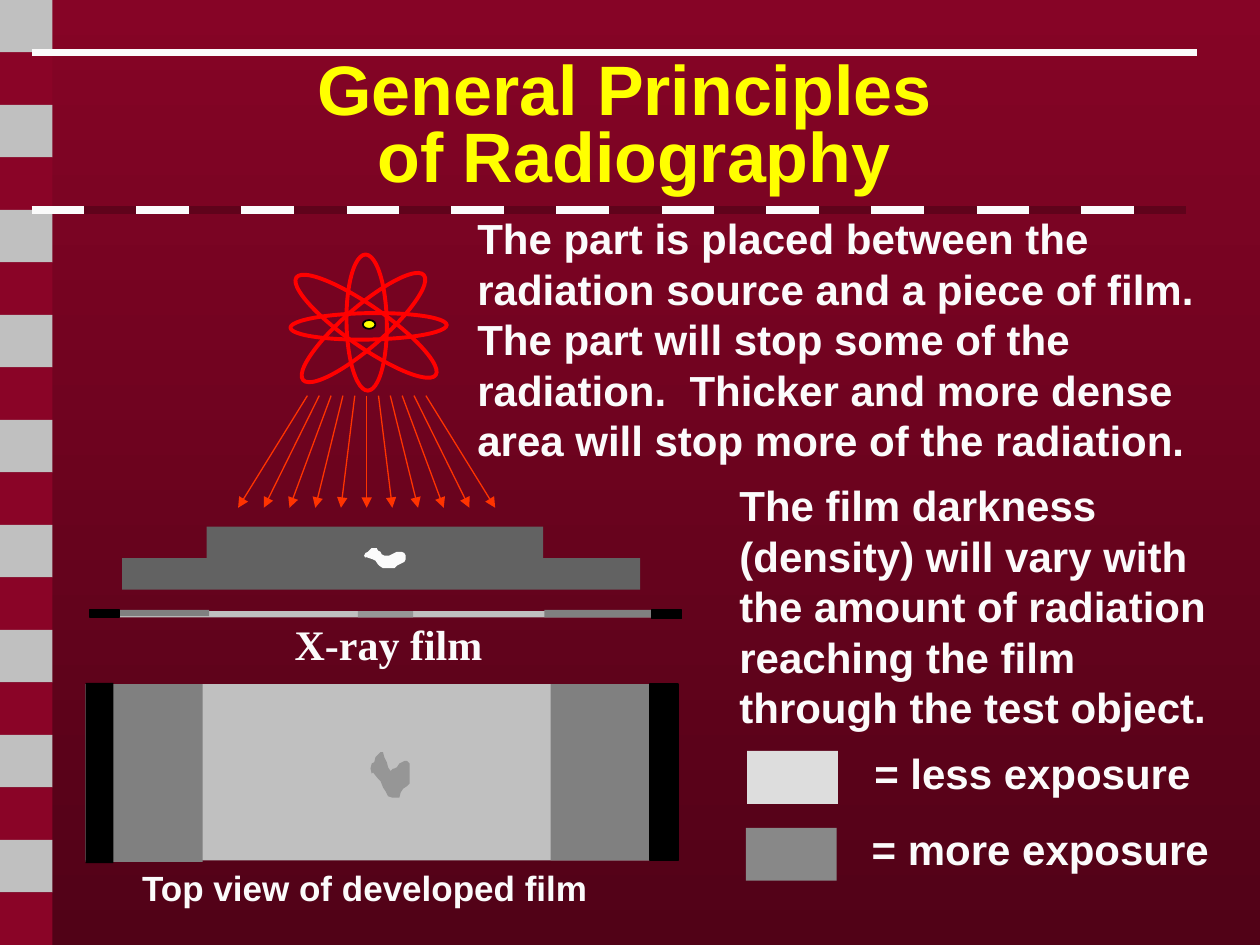
from lxml.etree import SubElement
from pptx import Presentation
from pptx.dml.color import RGBColor
from pptx.enum.shapes import MSO_CONNECTOR as Connector, MSO_SHAPE as Shape
from pptx.enum.text import MSO_ANCHOR as Anchor, MSO_AUTO_SIZE as AutoSize, PP_ALIGN as Align
from pptx.oxml.ns import qn
from pptx.util import Inches, Pt

THEME = {
    "top": "860426", "bottom": "510217", "band": "8A0427", "dash": "5F031B",
    "white": "FBFBFB", "title": "FFFF00", "silver": "C0C0C0", "steel": "626262",
    "gray": "808080", "flaw": "969696", "less": "DDDDDD", "more": "888888",
    "black": "000000", "atom": "FF0000", "ray": "FF3300",
    "sans": "Arial", "serif": "Times New Roman",
    "title_size": 40, "body_size": 24, "caption_size": 20,
}

deck = Presentation()
deck.slide_width, deck.slide_height = Inches(10), Inches(7.5)
UNIT = deck.slide_width // 1000  # places are thousandths of the slide's width
CELL = 1000 / 24                 # the side band and the rules share 24 columns
slide = deck.slides.add_slide(deck.slide_layouts[5])
shapes = slide.shapes


def color(name):
    return RGBColor.from_string(THEME[name])


def write(text, box, holder=None, size="body_size", font="sans", ink="white",
          align=Align.LEFT, anchor=Anchor.TOP, spacing=None, fit=AutoSize.SHAPE_TO_FIT_TEXT):
    place = [int(v * UNIT) for v in box]
    if holder is None:
        holder = shapes.add_textbox(*place)
    holder.left, holder.top, holder.width, holder.height = place
    frame = holder.text_frame
    frame.text = text
    frame.word_wrap, frame.auto_size, frame.vertical_anchor = True, fit, anchor
    paragraph = frame.paragraphs[0]
    paragraph.alignment, paragraph.line_spacing = align, spacing
    for run in paragraph.runs:
        run.font.name, run.font.size, run.font.bold = THEME[font], Pt(THEME[size]), True
        run.font.color.rgb = color(ink)


# Background
backdrop = slide.background.fill
backdrop.gradient()
backdrop.gradient_angle = 270
for stop, name in zip(backdrop.gradient_stops, ("top", "bottom")):
    stop.color.rgb = color(name)

# Blocks: left, top, width, height, rotation, preset, fill, outline, outline width
blocks = [(0, row * CELL, CELL, CELL, 0, Shape.RECTANGLE,
           "band" if row % 2 else "silver", None, 0) for row in range(18)]

# Atom: four orbits and a nucleus
blocks += [(*orbit, Shape.OVAL, None, "atom", 2.25) for orbit in (
    (282, 197, 21, 124, 269), (225, 244, 127, 32, 319),
    (223, 243, 135, 32, 35), (237, 240, 108, 32, 269))]
blocks.append((288, 254, 10, 7, 0, Shape.OVAL, "title", "black", 1))

# Film from the side, film from above, and the key
blocks += [(*box, 0, Shape.RECTANGLE, fill, outline, 1) for *box, fill, outline in (
    (71, 485, 470, 5, "silver", None),
    (72, 484, 94, 5, "gray", None),
    (432, 484, 109, 6, "gray", None),
    (71, 484, 24, 6, "black", "black"),
    (517, 484, 24, 7, "black", "black"),
    (284, 485, 44, 5, "flaw", None),
    (68, 543, 470, 140, "silver", None),
    (437, 543, 101, 140, "gray", None),
    (68, 543, 93, 141, "gray", None),
    (516, 543, 22, 140, "black", "black"),
    (68, 542, 22, 143, "black", None),
    (593, 596, 72, 42, "less", None),
    (592, 657, 72, 42, "more", None))]

for *box, turn, preset, fill, outline, weight in blocks:
    block = shapes.add_shape(preset, *(int(v * UNIT) for v in box))
    block.shadow.inherit = False
    block.rotation = turn
    if fill:
        block.fill.solid()
        block.fill.fore_color.rgb = color(fill)
    else:
        block.fill.background()
    if outline:
        block.line.color.rgb = color(outline)
        block.line.width = Pt(weight)
    else:
        block.line.fill.background()

# Test part, the flaw inside it, and the flaw's image on the film
test_part = [(164, 418), (431, 418), (431, 443), (508, 443), (508, 468),
             (97, 468), (97, 443), (164, 443)]
flaw = [(290, 442), (296, 444), (298, 445), (300, 448), (301, 449), (304, 451),
        (313, 451), (315, 449), (317, 448), (319, 447), (321, 446), (322, 444),
        (322, 441), (321, 439), (319, 438), (315, 438), (313, 439), (311, 440),
        (309, 441), (305, 441), (303, 440), (302, 438), (300, 437), (299, 435),
        (295, 435), (293, 437), (292, 438), (290, 439), (289, 441), (290, 443)]
flaw_image = [(296, 613), (300, 618), (302, 620), (304, 625), (306, 628), (308, 632),
              (311, 633), (317, 633), (318, 629), (320, 626), (323, 624), (325, 622),
              (325, 606), (323, 604), (321, 604), (319, 605), (317, 606), (315, 609),
              (313, 610), (312, 610), (310, 612), (308, 609), (307, 605), (305, 601),
              (304, 597), (302, 597), (300, 599), (298, 601), (297, 605), (295, 606),
              (294, 610), (295, 614)]
for points, fill in ((test_part, "steel"), (flaw, "white"), (flaw_image, "flaw")):
    builder = shapes.build_freeform(*points[0], scale=UNIT)
    builder.add_line_segments(points[1:], close=True)
    outline = builder.convert_to_shape()
    outline.shadow.inherit = False
    outline.fill.solid()
    outline.fill.fore_color.rgb = color(fill)
    outline.line.fill.background()

# Title, explanations, captions and key labels
write("General Principles\v of Radiography", (115, 54, 761, 96), holder=shapes.title,
      size="title_size", ink="title", align=Align.CENTER, anchor=Anchor.MIDDLE,
      spacing=0.8, fit=AutoSize.NONE)
write("The part is placed between the radiation source and a piece of film.  "
      "The part will stop some of the radiation.  Thicker and more dense area "
      "will stop more of the radiation.", (369, 164, 631, 210))
write("The film darkness (density) will vary with the amount of radiation reaching "
      "the film through the test object.", (577, 376, 397, 210))
write("X-ray film", (224, 486, 183, 50), font="serif")
write("Top view of developed film", (103, 683, 417, 50), size="caption_size")
write("= less exposure", (684, 588, 272, 50))
write("= more exposure", (682, 649, 297, 50))

# Strokes: the solid rule, the dashed rule, then the fan of rays
strokes = [(25, CELL, 950, CELL, "white", 4.5)]
strokes += [(25 + step * CELL, 4 * CELL, 25 + (step + 1) * CELL, 4 * CELL,
             "dash" if step % 2 else "white", 4.5) for step in range(22)]
strokes += [(244 + 9.4 * ray, 314, 189 + 20.4 * ray, 403, "ray", 0.75) for ray in range(11)]
for *ends, ink, weight in strokes:
    stroke = shapes.add_connector(Connector.STRAIGHT, *(int(v * UNIT) for v in ends))
    stroke.line.color.rgb = color(ink)
    stroke.line.width = Pt(weight)
    if ink == "ray":
        SubElement(stroke.line._get_or_add_ln(), qn("a:tailEnd"), type="triangle")
    SubElement(stroke._element.spPr, qn("a:effectLst"))

deck.save("out.pptx")
